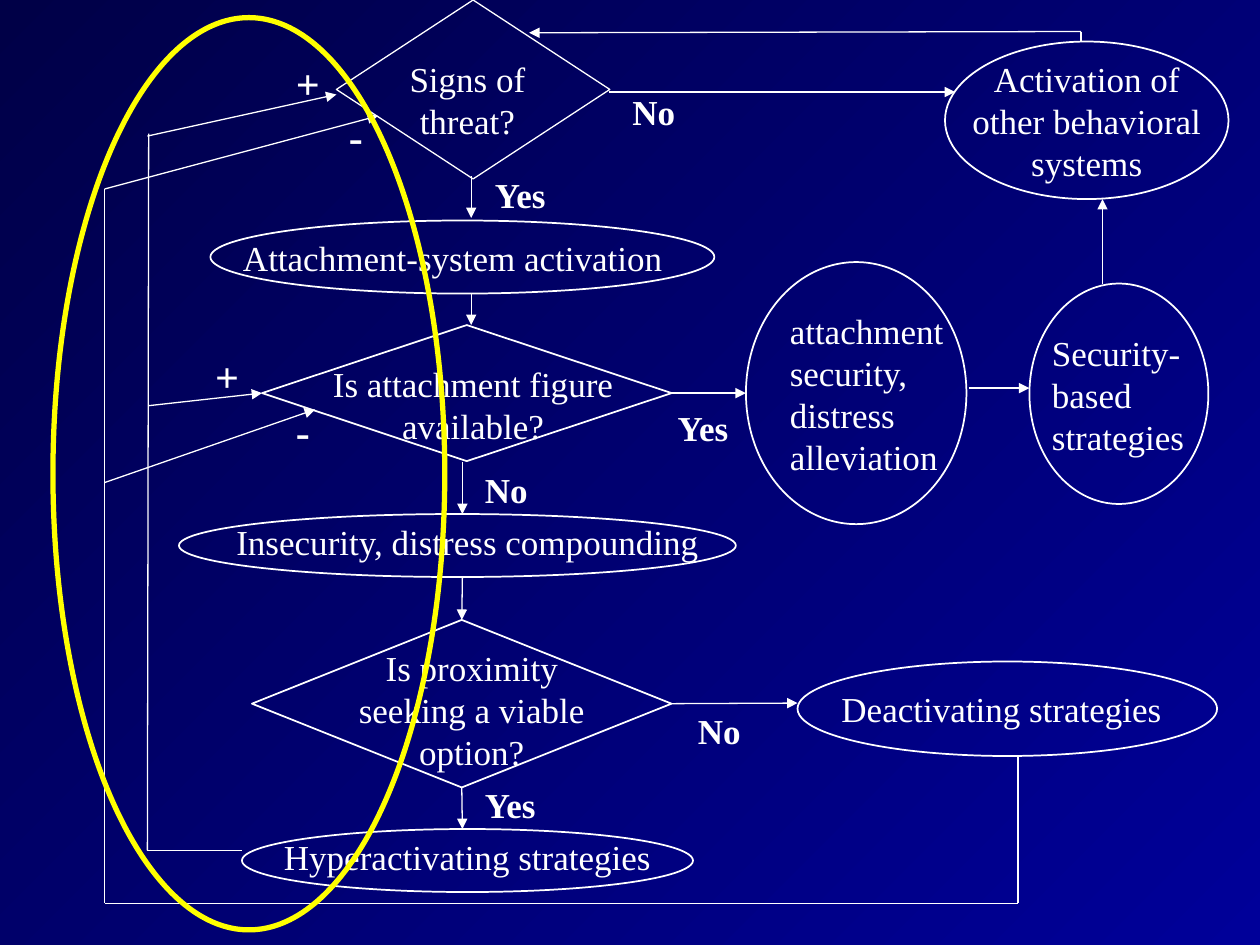
from dataclasses import dataclass
from typing import Optional

import pptx
import pptx.dml.color
import pptx.enum.shapes
import pptx.enum.text
import pptx.oxml
import pptx.oxml.ns
import pptx.util
from pptx.util import Inches

MSO = pptx.enum.shapes.MSO_SHAPE
ALIGN = pptx.enum.text.PP_ALIGN
WHITE = "FFFFFF"
YELLOW = "FFFF00"


@dataclass
class Label:
    text: str
    left: float
    top: float
    width: float
    height: float = 0.43
    align: ALIGN = ALIGN.CENTER
    size: int = 20
    bold: bool = False


@dataclass
class Node:
    key: str
    kind: MSO
    left: float
    top: float
    width: float
    height: float
    color: str = WHITE
    weight: float = 1


@dataclass
class Line:
    x1: float
    y1: float
    x2: float
    y2: float
    arrow: bool = True
    weight: float = 0.75
    begin: Optional[tuple[str, int]] = None
    end: Optional[tuple[str, int]] = None


def answer(text: str, left: float, top: float) -> Label:
    return Label(text, left, top, 0.83, align=ALIGN.LEFT, bold=True)


def sign(text: str, left: float, top: float, width: float) -> Label:
    return Label(text, left, top, width, 0.5, ALIGN.LEFT, 24, True)


LABELS = [
    Label("Signs of threat?", 2.92, 0.41, 1.58, 0.77),
    Label("Attachment-system activation", 1.83, 1.83, 3.92, align=ALIGN.LEFT),
    Label("Is attachment figure available?", 2.17, 2.83, 3.17, 0.77),
    Label("Insecurity, distress compounding", 1.75, 4.08, 3.92),
    Label("Is proximity seeking a viable option?", 2.58, 5.08, 2.33, 1.1),
    Label("Hyperactivating strategies", 2, 6.58, 3.42),
    Label("attachment security, distress alleviation", 6.17, 2.41, 1.5, 1.43, ALIGN.LEFT),
    Label("Security-based strategies", 8.25, 2.58, 1.25, 1.1, ALIGN.LEFT),
    Label("Activation of other behavioral systems", 7.58, 0.41, 2.09, 1.1),
    Label("Deactivating strategies", 6.58, 5.41, 3, align=ALIGN.LEFT),
    answer("Yes", 3.83, 1.33),
    answer("No", 4.92, 0.67),
    answer("Yes", 5.28, 3.18),
    answer("No", 3.75, 3.67),
    answer("No", 5.44, 5.58),
    answer("Yes", 3.75, 6.17),
    sign("+", 2.25, 0.41, 0.42),
    sign("-", 2.67, 0.83, 0.33),
    sign("+", 1.61, 2.73, 0.42),
    sign("-", 2.25, 3.17, 0.33),
]

NODES = [
    Node("threat", MSO.DIAMOND, 2.67, 0, 2.17, 1.42, weight=0.75),
    Node("activation", MSO.OVAL, 1.67, 1.75, 4, 0.58),
    Node("available", MSO.DIAMOND, 2.08, 2.58, 3.25, 1.08),
    Node("insecurity", MSO.OVAL, 1.42, 4.08, 4.42, 0.5),
    Node("proximity", MSO.DIAMOND, 2, 4.92, 3.33, 1.33),
    Node("hyperactivating", MSO.OVAL, 1.92, 6.58, 3.58, 0.5),
    Node("security", MSO.OVAL, 5.92, 2.08, 1.75, 2.08),
    Node("security based", MSO.OVAL, 8.17, 2.25, 1.42, 1.75),
    Node("other systems", MSO.OVAL, 7.5, 0.33, 2.25, 1.25),
    Node("deactivating", MSO.OVAL, 6.33, 5.25, 3.33, 0.75),
]
FEEDBACK = Node("feedback", MSO.OVAL, 0.42, 0.14, 3.11, 7.24, YELLOW, 3)

LINES = [
    Line(3.74, 1.4, 3.74, 1.73),
    Line(3.74, 2.33, 3.74, 2.58),
    Line(3.67, 3.67, 3.67, 4.08),
    Line(3.67, 4.58, 3.67, 4.92, end=("proximity", 0)),
    Line(3.67, 6.25, 3.67, 6.58, begin=("proximity", 2)),
    Line(4.83, 0.73, 7.58, 0.73),
    Line(5.33, 3.12, 5.92, 3.12, begin=("available", 3)),
    Line(7.69, 3.08, 8.17, 3.08, weight=1),
    Line(8.75, 2.25, 8.75, 1.58),
    Line(5.33, 5.58, 6.33, 5.58, begin=("proximity", 3)),
    Line(8.58, 0.33, 8.58, 0.25, arrow=False),
    Line(8.58, 0.25, 4.2, 0.26),
    Line(1.92, 6.75, 1.17, 6.75, arrow=False),
    Line(1.17, 6.75, 1.18, 1.06, arrow=False),
    Line(1.18, 3.22, 2.08, 3.13, end=("available", 1)),
    Line(1.17, 1.08, 2.67, 0.75),
    Line(8.08, 6, 8.08, 7.17, arrow=False),
    Line(8.08, 7.17, 0.83, 7.17, arrow=False),
    Line(0.83, 7.17, 0.83, 1.5, arrow=False),
    Line(0.83, 3.83, 2.5, 3.25),
    Line(0.83, 1.5, 3, 0.92),
]


def rgb(color: str) -> pptx.dml.color.RGBColor:
    return pptx.dml.color.RGBColor.from_string(color)


def write(tf, text: str, *, align=ALIGN.LEFT, size=20, bold=False, color=WHITE) -> None:
    tf.word_wrap = True
    tf.auto_size = pptx.enum.text.MSO_AUTO_SIZE.SHAPE_TO_FIT_TEXT
    p = tf.paragraphs[0]
    p.alignment = align
    r = p.add_run()
    r.text = text
    r.font.name = "Times New Roman"
    r.font.size = pptx.util.Pt(size)
    r.font.bold = bold
    r.font.color.rgb = rgb(color)


def draw_label(s, label: Label) -> None:
    sp = s.shapes.add_textbox(Inches(label.left), Inches(label.top),
                              Inches(label.width), Inches(label.height))
    write(sp.text_frame, label.text, align=label.align, size=label.size, bold=label.bold)


def draw_node(s, node: Node):
    sp = s.shapes.add_shape(node.kind, Inches(node.left), Inches(node.top),
                            Inches(node.width), Inches(node.height))
    sp.shadow.inherit = False
    sp.fill.background()
    sp.line.color.rgb = rgb(node.color)
    sp.line.width = pptx.util.Pt(node.weight)
    return sp


def draw_line(s, line: Line, nodes: dict) -> None:
    cx = s.shapes.add_connector(pptx.enum.shapes.MSO_CONNECTOR.STRAIGHT,
                                Inches(line.x1), Inches(line.y1),
                                Inches(line.x2), Inches(line.y2))
    if line.begin:
        cx.begin_connect(nodes[line.begin[0]], line.begin[1])
    if line.end:
        cx.end_connect(nodes[line.end[0]], line.end[1])
    cx.line.color.rgb = rgb(WHITE)
    cx.line.width = pptx.util.Pt(line.weight)
    spPr = cx._element.spPr
    if line.arrow:
        spPr.find(pptx.oxml.ns.qn("a:ln")).append(pptx.oxml.parse_xml(
            f'<a:tailEnd {pptx.oxml.ns.nsdecls("a")} type="triangle"/>'))
    spPr.append(pptx.oxml.parse_xml(f'<a:effectLst {pptx.oxml.ns.nsdecls("a")}/>'))


def main() -> None:
    prs = pptx.Presentation()
    prs.slide_width, prs.slide_height = Inches(10), Inches(7.5)
    s = prs.slides.add_slide(prs.slide_layouts[6])
    fill = s.background.fill
    fill.gradient()
    fill.gradient_angle = 315
    for stop, color in zip(fill.gradient_stops, ("000047", "000099")):
        stop.color.rgb = rgb(color)
    for label in LABELS:
        draw_label(s, label)
    nodes = {node.key: draw_node(s, node) for node in NODES}
    for line in LINES:
        draw_line(s, line, nodes)
    draw_node(s, FEEDBACK)
    prs.save("out.pptx")


if __name__ == "__main__":
    main()
